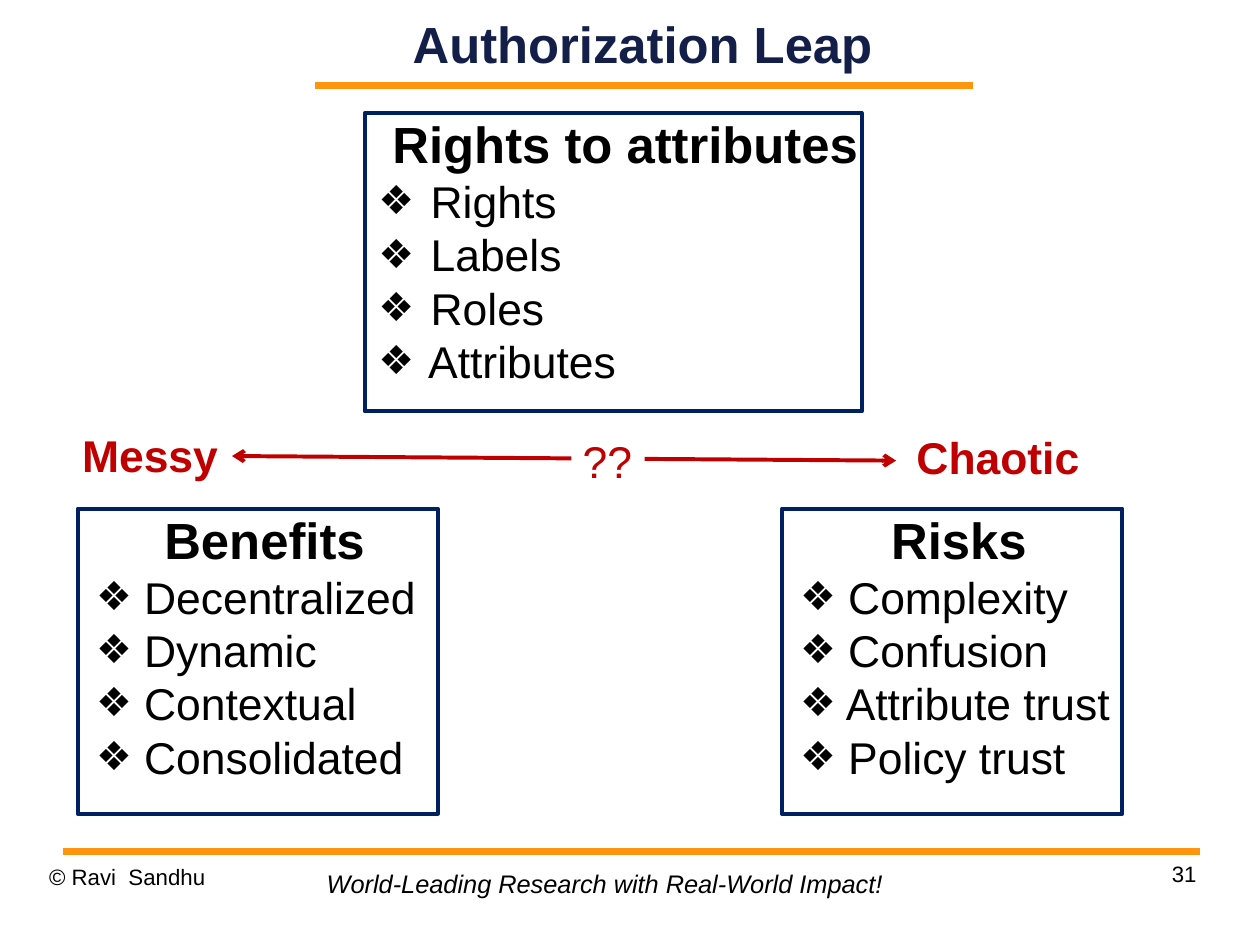
from lxml.etree import SubElement
from pptx import Presentation
from pptx.dml.color import RGBColor
from pptx.enum.shapes import MSO_CONNECTOR, MSO_SHAPE
from pptx.enum.text import MSO_ANCHOR, MSO_AUTO_SIZE, PP_ALIGN
from pptx.oxml.ns import qn
from pptx.util import Inches, Pt

BLACK = RGBColor(0x00, 0x00, 0x00)
WHITE = RGBColor(0xFF, 0xFF, 0xFF)
NAVY = RGBColor(0x00, 0x20, 0x60)
INK = RGBColor(0x13, 0x1F, 0x49)
RED = RGBColor(0xC0, 0x00, 0x00)
ORANGE = RGBColor(0xFF, 0x95, 0x0E)
LEFT, CENTER, RIGHT = PP_ALIGN.LEFT, PP_ALIGN.CENTER, PP_ALIGN.RIGHT
TOP, MIDDLE = MSO_ANCHOR.TOP, MSO_ANCHOR.MIDDLE
STRAIGHT, RECT = MSO_CONNECTOR.STRAIGHT, MSO_SHAPE.RECTANGLE
FIXED = MSO_AUTO_SIZE.NONE
FACE = "Arial"
INCH = 2.54


def place(shape, left, top, width, height):
    shape.left, shape.top = Inches(left), Inches(top)
    shape.width, shape.height = Inches(width), Inches(height)


def frame(shape, inset=0, wrap=True, anchor=TOP):
    body = shape.text_frame
    body.auto_size = FIXED
    body.word_wrap = wrap
    body.vertical_anchor = anchor
    body.margin_left = body.margin_right = Inches(inset)
    body.margin_top = body.margin_bottom = Inches(inset / 2)
    return body


def write(para, text, size, color=BLACK, bold=False, italic=False, align=LEFT):
    para.alignment = align
    para.space_before = Pt(0)
    run = para.add_run()
    run.text = text
    font = run.font
    font.name, font.size = FACE, Pt(size)
    font.bold, font.italic = bold, italic
    font.color.rgb = color


def indent(para, hang):
    props = para._p.get_or_add_pPr()
    props.set("marL", str(Inches(0.47)))
    props.set("indent", str(Inches(-hang)))
    return props


def bullet(para, hang):
    props = indent(para, hang)
    tint = SubElement(props, qn("a:buClr"))
    SubElement(tint, qn("a:srgbClr"), val=str(BLACK))
    SubElement(props, qn("a:buSzPct"), val="90000")
    SubElement(props, qn("a:buFont"), typeface=FACE)
    SubElement(props, qn("a:buChar"), char="❖")


def panel(shape, head, items, hang=0.31, align=CENTER):
    shape.line.color.rgb = NAVY
    shape.line.width = Pt(2.5)
    shape.fill.background()
    body = frame(shape)
    para = body.paragraphs[0]
    SubElement(indent(para, 0.35), qn("a:buNone"))
    if align == LEFT:
        write(para, " ", 32)
    write(para, head, 32, bold=True, align=align)
    for item in items:
        para = body.add_paragraph()
        bullet(para, hang)
        write(para, " " + item, 28)


def box(slide, left, top, width, height):
    shape = slide.shapes.add_shape(
        RECT, Inches(left), Inches(top), Inches(width), Inches(height))
    shape.shadow.inherit = False
    return shape


def label(slide, area, text, size, inset=0.1, wrap=False, **style):
    shape = slide.shapes.add_textbox(*map(Inches, area))
    write(frame(shape, inset, wrap).paragraphs[0], text, size, **style)
    return shape


def rule(slide, ends, color, width, arrows=False):
    line = slide.shapes.add_connector(STRAIGHT, *map(Inches, ends))
    line.line.color.rgb = color
    line.line.width = Pt(width)
    if arrows:
        stroke = line._element.spPr.find(qn("a:ln"))
        for end in ("a:headEnd", "a:tailEnd"):
            SubElement(stroke, qn(end), type="arrow")
    SubElement(line._element.spPr, qn("a:effectLst"))


def main():
    deck = Presentation()
    deck.slide_width, deck.slide_height = Inches(28 / INCH), Inches(21 / INCH)
    slide = deck.slides.add_slide(deck.slide_layouts[1])
    title, rights = slide.placeholders

    rule(slide, (2.76, 0.75, 8.51, 0.75), ORANGE, 4.31)
    rule(slide, (0.55, 7.45, 10.5, 7.45), ORANGE, 4.31)

    place(title, 2.41, 0, 6.43, 0.75)
    write(frame(title, anchor=MIDDLE).paragraphs[0], "Authorization Leap", 32,
          color=INK, bold=True, align=CENTER)

    place(rights, 3.19, 0.99, 4.35, 2.61)
    panel(rights, "Rights to attributes",
          ["Rights", "Labels", "Roles", "Attributes"], 0.35, LEFT)
    panel(box(slide, 0.68, 4.45, 3.15, 2.67), "Benefits",
          ["Decentralized", "Dynamic", "Contextual", "Consolidated"])
    panel(box(slide, 6.84, 4.45, 2.98, 2.67), "Risks",
          ["Complexity", "Confusion", "Attribute trust", "Policy trust"])

    label(slide, (0.62, 3.7, 1.41, 0.57), "Messy", 28, color=RED, bold=True)
    label(slide, (7.92, 3.71, 1.64, 0.57), "Chaotic", 28, color=RED, bold=True)
    rule(slide, (2.03, 3.99, 7.84, 4.03), RED, 2.5, arrows=True)
    doubt = label(slide, (5, 3.75, 0.64, 0.57), "??", 28, color=RED)
    doubt.fill.solid()
    doubt.fill.fore_color.rgb = WHITE

    label(slide, (0.43, 7.55, 2.57, 0.57), "© Ravi  Sandhu", 14,
          inset=0, wrap=True)
    label(slide, (2.76, 7.55, 5.08, 0.37),
          "World-Leading Research with Real-World Impact!", 16, italic=True)
    label(slide, (7.9, 7.53, 2.57, 0.57), "31", 14,
          inset=0, wrap=True, align=RIGHT)
    deck.save("out.pptx")


if __name__ == "__main__":
    main()
